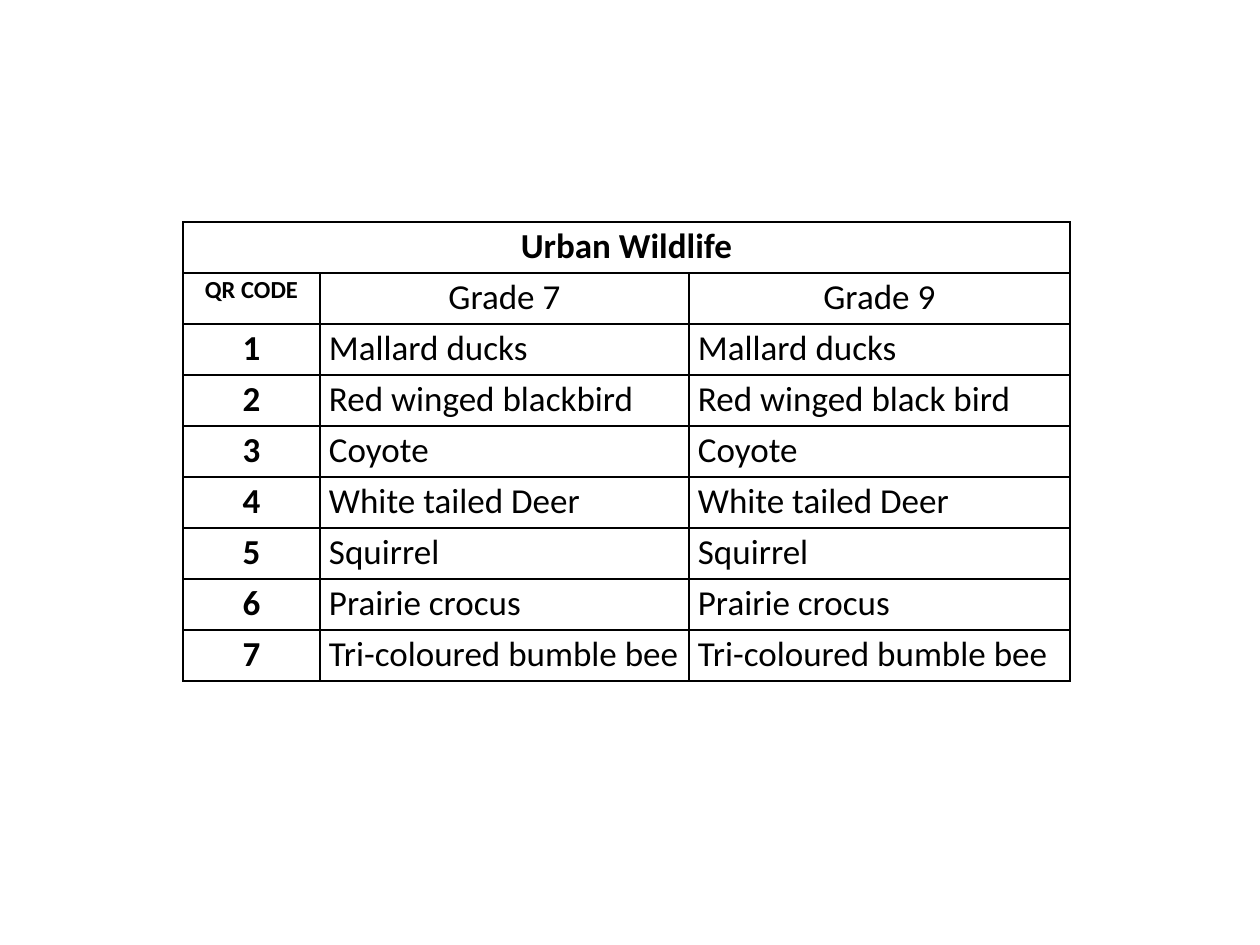
import dataclasses

import lxml.etree
import pptx
import pptx.dml.color
import pptx.enum.text
import pptx.oxml.ns
import pptx.util

PX_PER_INCH = 126
CENTER = pptx.enum.text.PP_ALIGN.CENTER
LEFT = pptx.enum.text.PP_ALIGN.LEFT

SPECIES = [
    ("Mallard ducks", "Mallard ducks"),
    ("Red winged blackbird", "Red winged black bird"),
    ("Coyote", "Coyote"),
    ("White tailed Deer", "White tailed Deer"),
    ("Squirrel", "Squirrel"),
    ("Prairie crocus", "Prairie crocus"),
    ("Tri-coloured bumble bee", "Tri-coloured bumble bee"),
]


def px(length):
    """Turn slide pixels into EMU."""
    return pptx.util.Emu(round(length * pptx.util.Inches(1) / PX_PER_INCH))


def apply(target, values):
    for name, value in values.items():
        setattr(target, name, value)


@dataclasses.dataclass(frozen=True)
class Theme:
    font: str = "Calibri"
    ink: str = "000000"
    paper: str = "FFFFFF"
    body_size: int = 20
    label_size: int = 14
    border_width: int = 1


class WildlifePage:
    def __init__(self, deck, theme):
        self.theme = theme
        self.page = deck.slides.add_slide(deck.slide_layouts[6])
        background = self.page.background.fill
        background.solid()
        background.fore_color.rgb = pptx.dml.color.RGBColor.from_string(theme.paper)

    def table(self, left, top, column_widths, row_height, row_count):
        frame = self.page.shapes.add_table(
            row_count, len(column_widths), px(left), px(top),
            px(sum(column_widths)), px(row_height * row_count))
        table = frame.table
        apply(table, {"first_row": False, "horz_banding": False})
        for column, width in zip(table.columns, column_widths):
            column.width = px(width)
        for row in table.rows:
            row.height = px(row_height)
        for cell in table.iter_cells():
            apply(cell, {"margin_left": px(9), "margin_right": px(9),
                         "margin_top": 0, "margin_bottom": 0})
            self.borders(cell)
            cell.fill.background()
        return table

    def borders(self, cell):
        properties = cell._tc.get_or_add_tcPr()
        qn = pptx.oxml.ns.qn
        width = pptx.util.Pt(self.theme.border_width)
        for side in ("lnL", "lnR", "lnT", "lnB"):
            line = lxml.etree.SubElement(properties, qn(f"a:{side}"), w=str(width))
            fill = lxml.etree.SubElement(line, qn("a:solidFill"))
            lxml.etree.SubElement(fill, qn("a:srgbClr"), val=self.theme.ink)

    def cell_text(self, cell, text, alignment=CENTER, bold=False, size=None):
        para = cell.text_frame.paragraphs[0]
        apply(para, {"alignment": alignment, "line_spacing": 1.07,
                     "space_after": pptx.util.Pt(8)})
        span = para.add_run()
        span.text = text
        apply(span.font, {"name": self.theme.font, "bold": bold,
                          "size": pptx.util.Pt(size or self.theme.body_size)})
        span.font.color.rgb = pptx.dml.color.RGBColor.from_string(self.theme.ink)


def main():
    deck = pptx.Presentation()
    apply(deck, {"slide_width": px(1260), "slide_height": px(945)})
    theme = Theme()
    page = WildlifePage(deck, theme)
    table = page.table(183, 222, (137, 369, 381), 51, len(SPECIES) + 2)

    table.cell(0, 0).merge(table.cell(0, 2))
    page.cell_text(table.cell(0, 0), "Urban Wildlife", bold=True)
    page.cell_text(table.cell(1, 0), "QR CODE", bold=True, size=theme.label_size)
    for column, grade in enumerate(("Grade 7", "Grade 9"), start=1):
        page.cell_text(table.cell(1, column), grade)

    for number, names in enumerate(SPECIES, start=1):
        row = number + 1
        page.cell_text(table.cell(row, 0), str(number), bold=True)
        for column, name in enumerate(names, start=1):
            page.cell_text(table.cell(row, column), name, alignment=LEFT)

    deck.save("out.pptx")


if __name__ == "__main__":
    main()
